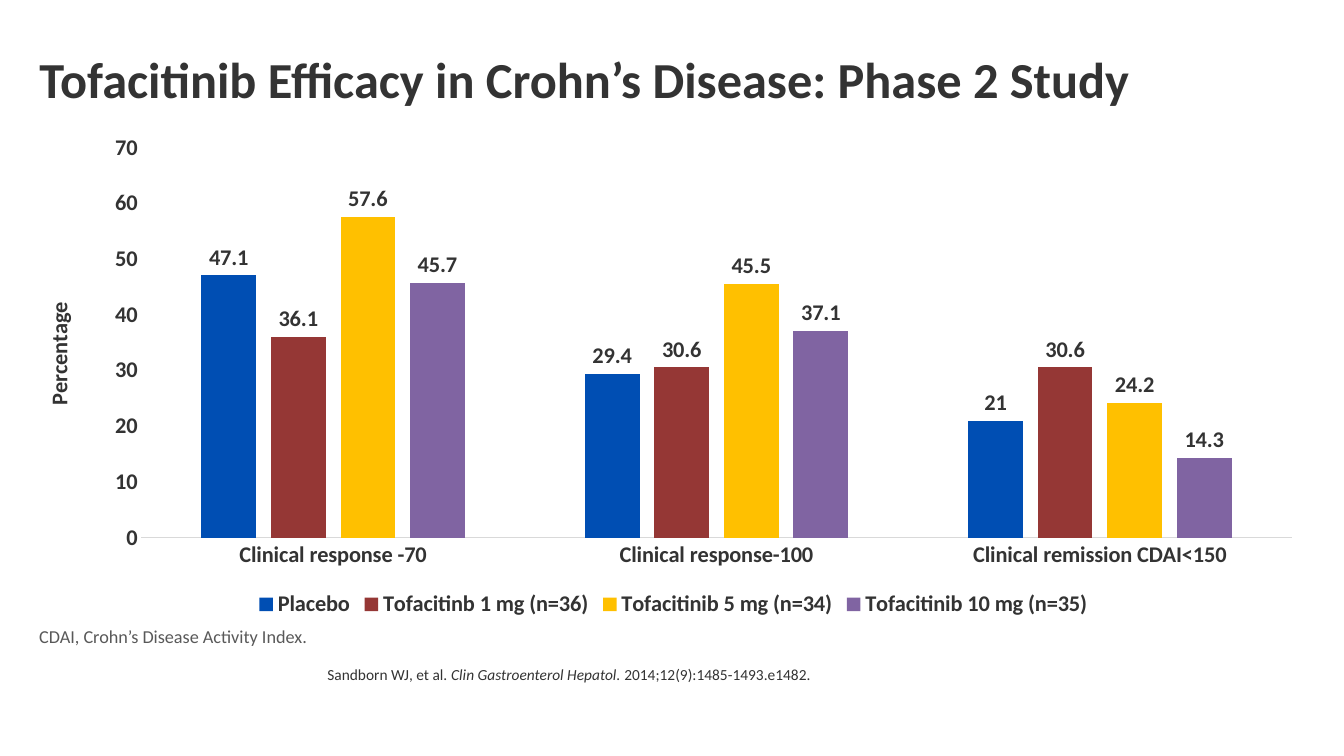
"""Build the slide on tofacitinib efficacy in Crohn's disease."""
from dataclasses import dataclass

from lxml.etree import SubElement
from pptx import Presentation
from pptx.chart.data import CategoryChartData
from pptx.dml.color import RGBColor
from pptx.enum.chart import XL_CHART_TYPE, XL_LABEL_POSITION, XL_LEGEND_POSITION, XL_TICK_MARK
from pptx.enum.text import MSO_ANCHOR
from pptx.oxml import parse_xml
from pptx.oxml.ns import nsdecls, qn
from pptx.util import Cm, Pt

TITLE = "Tofacitinib Efficacy in Crohn’s Disease: Phase 2 Study"
ABBREVIATION = "CDAI, Crohn’s Disease Activity Index."
CITATION = [
    ("Sandborn WJ, et al. ", False),
    ("Clin Gastroenterol Hepatol.", True),
    (" 2014;12(9):1485-1493.e1482.", False),
]
AXIS_TITLE = "Percentage"
OUTCOMES = ["Clinical response -70", "Clinical response-100", "Clinical remission CDAI<150"]
ARMS = [
    ("Placebo", (47.1, 29.4, 21), "004EB3"),
    ("Tofacitinb 1 mg (n=36)", (36.1, 30.6, 30.6), "953735"),
    ("Tofacitinib 5 mg (n=34)", (57.6, 45.5, 24.2), "FFC000"),
    ("Tofacitinib 10 mg (n=35)", (45.7, 37.1, 14.3), "8064A2"),
]


@dataclass(frozen=True)
class Theme:
    font: str = "Calibri"
    ink: str = "333333"
    muted: str = "595959"
    rule: str = "D9D9D9"
    title: int = 36
    chart: int = 16
    note: int = 13
    citation: int = 11


THEME = Theme()
LEFT, WIDTH = 0.74, 32.46
PLOT_AREA = {"x": 0.087, "y": 0.048, "w": 0.893, "h": 0.782}
AXIS_TITLE_SPOT = {"x": 0.008, "y": 0.35}


def style_font(font, size, color=THEME.ink, bold=False, italic=False):
    font.name, font.size, font.bold, font.italic = THEME.font, Pt(size), bold, italic
    font.color.rgb = RGBColor.from_string(color)


def write_text(frame, runs, *, anchor=MSO_ANCHOR.TOP, **font_format):
    frame.word_wrap = True
    frame.vertical_anchor = anchor
    paragraph = frame.paragraphs[0]
    paragraph.line_spacing = 0.9
    for text, italic in runs:
        run = paragraph.add_run()
        run.text = text
        style_font(run.font, italic=italic, **font_format)


def place_part(parent, index, fractions, inner=False):
    for old_layout in parent.findall(qn("c:layout")):
        parent.remove(old_layout)
    layout = parse_xml(f"<c:layout {nsdecls('c')}><c:manualLayout/></c:layout>")
    settings = {"layoutTarget": "inner"} if inner else {}
    settings.update(xMode="edge", yMode="edge", **fractions)
    for tag, value in settings.items():
        SubElement(layout[0], qn(f"c:{tag}")).set("val", str(value))
    parent.insert(index, layout)


def add_efficacy_chart(slide):
    efficacy = CategoryChartData()
    efficacy.categories = OUTCOMES
    for arm, values, _ in ARMS:
        efficacy.add_series(arm, values)
    chart = slide.shapes.add_chart(
        XL_CHART_TYPE.COLUMN_CLUSTERED, Cm(LEFT), Cm(3.12), Cm(WIDTH), Cm(12.57), efficacy
    ).chart
    chart.has_title = False
    style_font(chart.font, THEME.chart, bold=True)
    chart.has_legend = True
    chart.legend.position = XL_LEGEND_POSITION.BOTTOM
    chart.legend.include_in_layout = False
    style_font(chart.legend.font, THEME.chart, bold=True)

    outcome_axis, percent_axis = chart.category_axis, chart.value_axis
    for axis in (outcome_axis, percent_axis):
        axis.major_tick_mark = axis.minor_tick_mark = XL_TICK_MARK.NONE
        axis.has_major_gridlines = False
        style_font(axis.tick_labels.font, THEME.chart, bold=True)
    outcome_axis.format.line.color.rgb = RGBColor.from_string(THEME.rule)
    outcome_axis.format.line.width = Pt(0.75)
    percent_axis.format.line.fill.background()
    percent_axis.minimum_scale, percent_axis.maximum_scale = 0, 70
    percent_axis.major_unit = 10
    heading = percent_axis.axis_title
    heading.text_frame.text = AXIS_TITLE
    style_font(heading.text_frame.paragraphs[0].runs[0].font, THEME.chart, bold=True)
    place_part(heading._element, 1, AXIS_TITLE_SPOT)
    place_part(chart._chartSpace.chart.plotArea, 0, PLOT_AREA, inner=True)

    columns = chart.plots[0]
    columns.gap_width, columns.overlap = 219, -27
    columns.vary_by_categories = False
    for series, (_, _, color) in zip(columns.series, ARMS):
        series.format.fill.solid()
        series.format.fill.fore_color.rgb = RGBColor.from_string(color)
        labels = series.data_labels
        labels.show_value = True
        labels.position = XL_LABEL_POSITION.OUTSIDE_END
        style_font(labels.font, THEME.chart, bold=True)


def main():
    deck = Presentation()
    deck.slide_width, deck.slide_height = Cm(33.87), Cm(19.05)
    slide = deck.slides.add_slide(deck.slide_layouts[5])
    title = slide.shapes.title
    title.left, title.top, title.width, title.height = Cm(LEFT), Cm(0.48), Cm(WIDTH), Cm(3.18)
    write_text(title.text_frame, [(TITLE, False)], anchor=MSO_ANCHOR.MIDDLE,
               size=THEME.title, bold=True)
    title.text_frame.paragraphs[0].alignment = 1

    citation = slide.shapes.add_textbox(Cm(8), Cm(16.69), Cm(25.2), Cm(2.03))
    write_text(citation.text_frame, CITATION, size=THEME.citation)
    note = slide.shapes.add_textbox(Cm(LEFT), Cm(15.7), Cm(WIDTH), Cm(0.76))
    write_text(note.text_frame, [(ABBREVIATION, False)], size=THEME.note, color=THEME.muted)
    add_efficacy_chart(slide)
    deck.save("out.pptx")


if __name__ == "__main__":
    main()
